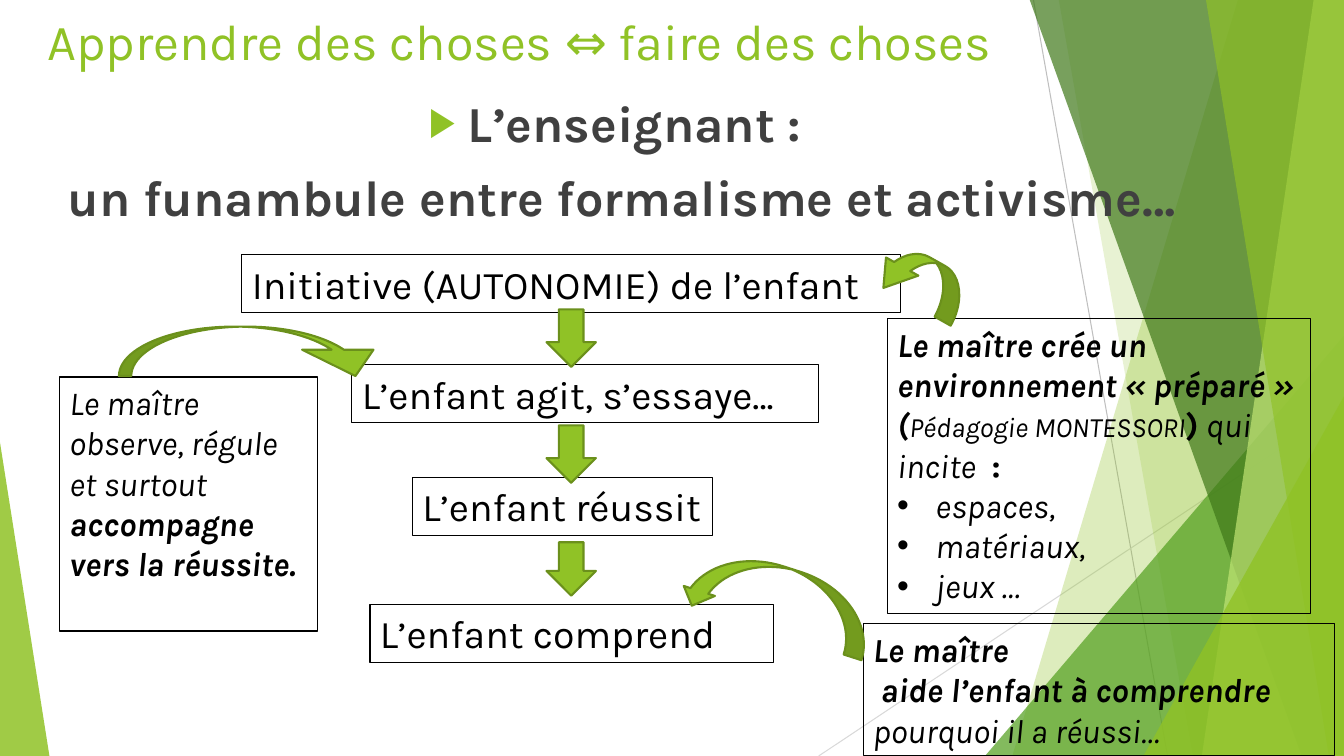
from dataclasses import dataclass

from lxml import etree
from pptx import Presentation
from pptx.dml.color import RGBColor
from pptx.enum import shapes, text
from pptx.oxml import ns
from pptx.util import Inches, Pt


@dataclass(frozen=True)
class Theme:
    font: str = "Karla"
    green: str = "90C226"
    leaf: str = "54A021"
    forest: str = "3F7819"
    lime: str = "C0E474"
    outline: str = "6B901C"
    heading: str = "404040"
    ink: str = "000000"
    grey: str = "BFBFBF"
    pale_grey: str = "D9D9D9"
    title: int = 36
    step: int = 28
    note: int = 24
    small: int = 20


T = Theme()


def add_text(p, content, size=T.note, color=T.ink, bold=False, italic=False):
    r = p.add_run()
    r.text = content
    r.font.name, r.font.size = T.font, Pt(size)
    r.font.bold, r.font.italic = bold, italic
    r.font.color.rgb = RGBColor.from_string(color)


def set_bullet(p, char=None, color=T.ink, percent=100):
    """Give a paragraph a hanging bullet, or none when char is None."""
    pPr = p._p.get_or_add_pPr()
    indent = Inches(0.38) if char else 0
    pPr.set("marL", str(indent))
    pPr.set("indent", str(-indent))
    if char is None:
        etree.SubElement(pPr, ns.qn("a:buNone"))
        return
    clr = etree.SubElement(pPr, ns.qn("a:buClr"))
    etree.SubElement(clr, ns.qn("a:srgbClr"), val=color)
    etree.SubElement(pPr, ns.qn("a:buSzPct"), val=str(percent * 1000))
    etree.SubElement(pPr, ns.qn("a:buFont"), typeface="Arial")
    etree.SubElement(pPr, ns.qn("a:buChar"), char=char)


prs = Presentation()
prs.slide_width, prs.slide_height = Inches(13.33), Inches(7.5)
s = prs.slides.add_slide(prs.slide_layouts[1])

# Background facets: thin lines, then translucent bands and triangles
for x1, y1, x2, y2, color in [
    (10.25, 0, 11.58, 7.5, T.grey),
    (13.33, 4.03, 8.12, 7.5, T.pale_grey),
]:
    line = s.shapes.add_connector(
        shapes.MSO_CONNECTOR.STRAIGHT, Inches(x1), Inches(y1), Inches(x2), Inches(y2))
    line.line.color.rgb = RGBColor.from_string(color)
    line.line.width = Pt(0.75)
    etree.SubElement(line._element.spPr, ns.qn("a:effectLst"))

# Bands give their top and bottom left x; triangles give left, top, width, apex
facets = [
    ("band", (12.28, 10.04), T.green, 30),
    ("band", (10.5, 11.83), T.green, 20),
    ("triangle", (9.77, 3.33, 3.56, 1), T.leaf, 72),
    ("band", (10.21, 12.91), T.forest, 70),
    ("band", (13.03, 11.92), T.lime, 70),
    ("band", (11.96, 13.18), T.green, 65),
    ("triangle", (11.34, 3.93, 1.99, 1), T.green, 80),
    ("triangle", (0, 4.39, 0.49, 0), T.green, 85),
]
for kind, geometry, color, alpha in facets:
    if kind == "band":
        top_x, bottom_x = geometry
        outline = s.shapes.build_freeform(Inches(top_x), Inches(-0.01))
        outline.add_line_segments(
            [(Inches(x), Inches(y)) for x, y in
             [(13.33, -0.01), (13.33, 7.5), (bottom_x, 7.5)]], close=True)
        facet = outline.convert_to_shape()
    else:
        left, top, width, apex = geometry
        facet = s.shapes.add_shape(
            shapes.MSO_SHAPE.ISOSCELES_TRIANGLE,
            Inches(left), Inches(top), Inches(width), Inches(7.5 - top))
        facet.adjustments[0] = apex
    facet.shadow.inherit = False
    facet.line.fill.background()
    facet.fill.solid()
    facet.fill.fore_color.rgb = RGBColor.from_string(color)
    srgb = facet._element.spPr.find(".//" + ns.qn("a:srgbClr"))
    etree.SubElement(srgb, ns.qn("a:alpha"), val=str(alpha * 1000))

# Title and body, brought in front of the facets
title, body = s.shapes.title, s.placeholders[1]
for sp, box in [(title, (0.37, 0.05, 10.74, 0.86)), (body, (0.37, 0.86, 11.59, 1.31))]:
    sp.left, sp.top, sp.width, sp.height = map(Inches, box)
    sp._element.getparent().append(sp._element)
    sp.text_frame.auto_size = text.MSO_AUTO_SIZE.NONE
    sp.text_frame.vertical_anchor = text.MSO_ANCHOR.TOP

p = title.text_frame.paragraphs[0]
p.alignment = text.PP_ALIGN.LEFT
add_text(p, "Apprendre des choses ⇔ faire des choses", size=T.title, color=T.green)

tf = body.text_frame
for p, content, char in [
    (tf.paragraphs[0], "L’enseignant : ", "▶"),
    (tf.add_paragraph(), "un funambule entre formalisme et activisme…", None),
]:
    p.alignment, p.space_before = text.PP_ALIGN.CENTER, Pt(10)
    set_bullet(p, char, T.green, 80)
    add_text(p, content, size=T.title, color=T.heading, bold=True)

# Framed texts: each paragraph is a bullet (or None) and its runs
step, strong = dict(size=T.step), dict(bold=True, italic=True)
slanted, upright = dict(italic=True), dict(bold=True)
frames = [
    ((2.4, 2.53, 6.53, 0.57), [(None, [("Initiative (AUTONOMIE) de l’enfant", step)])]),
    ((3.49, 3.62, 4.63, 0.57), [(None, [("L’enfant agit, s’essaye…", step)])]),
    ((4.09, 4.74, 2.98, 0.57), [(None, [("L’enfant réussit", step)])]),
    ((3.67, 6, 4, 0.57), [(None, [("L’enfant comprend", step)])]),
    ((8.8, 3.16, 4.2, 2.93), [
        (None, [("Le maître crée un environnement « préparé » (", strong),
                ("Pédagogie MONTESSORI", dict(size=T.small, italic=True)),
                (")", upright), (" qui incite ", slanted), (" :", upright)]),
        *[("•", [(item, slanted)]) for item in ("espaces,", "matériaux,", "jeux …")],
    ]),
    ((0.59, 3.74, 2.56, 2.52), [
        (None, [("Le maître observe, régule et surtout ", slanted),
                ("accompagne vers la réussite.", strong)]),
    ]),
    ((8.56, 6.19, 4.68, 1.31), [
        (None, [("Le maître", strong)]),
        (None, [(" aide l’enfant à comprendre", strong),
                (" pourquoi il a réussi…", slanted)]),
    ]),
]
for box, paragraphs in frames:
    frame = s.shapes.add_textbox(*map(Inches, box))
    frame.line.color.rgb = RGBColor.from_string(T.ink)
    frame.line.width = Pt(0.75)
    tf = frame.text_frame
    tf.word_wrap = True
    for i, (char, runs) in enumerate(paragraphs):
        p = tf.add_paragraph() if i else tf.paragraphs[0]
        if char:
            set_bullet(p, char)
        for content, style in runs:
            add_text(p, content, **style)

# Arrows: box, adjustments, rotation, mirrored
DOWN, CURVED = shapes.MSO_SHAPE.DOWN_ARROW, shapes.MSO_SHAPE.CURVED_DOWN_ARROW
arrows = [
    (DOWN, (5.42, 3.07, 0.49, 0.57), (), 0, False),
    (DOWN, (5.42, 4.22, 0.49, 0.57), (), 0, False),
    (DOWN, (5.42, 5.38, 0.49, 0.53), (), 0, False),
    (CURVED, (1.18, 3.24, 2.7, 0.49), (0.25, 1.445, 0.532), 0, False),
    (CURVED, (8.66, 2.54, 0.95, 0.49), (0.374, 0.751, 0.564), 29.3, True),
    (CURVED, (6.76, 5.62, 1.93, 0.65), (0.285, 0.5, 0.25), 17.8, True),
]
for kind, box, adjustments, rotation, mirrored in arrows:
    arrow = s.shapes.add_shape(kind, *map(Inches, box))
    for i, value in enumerate(adjustments):
        arrow.adjustments[i] = value
    arrow.rotation = rotation
    if mirrored:
        arrow._element.spPr.xfrm.set("flipH", "1")
    arrow.shadow.inherit = False
    arrow.fill.solid()
    arrow.fill.fore_color.rgb = RGBColor.from_string(T.green)
    arrow.line.color.rgb = RGBColor.from_string(T.outline)
    arrow.line.width = Pt(1.5)

prs.save("out.pptx")
